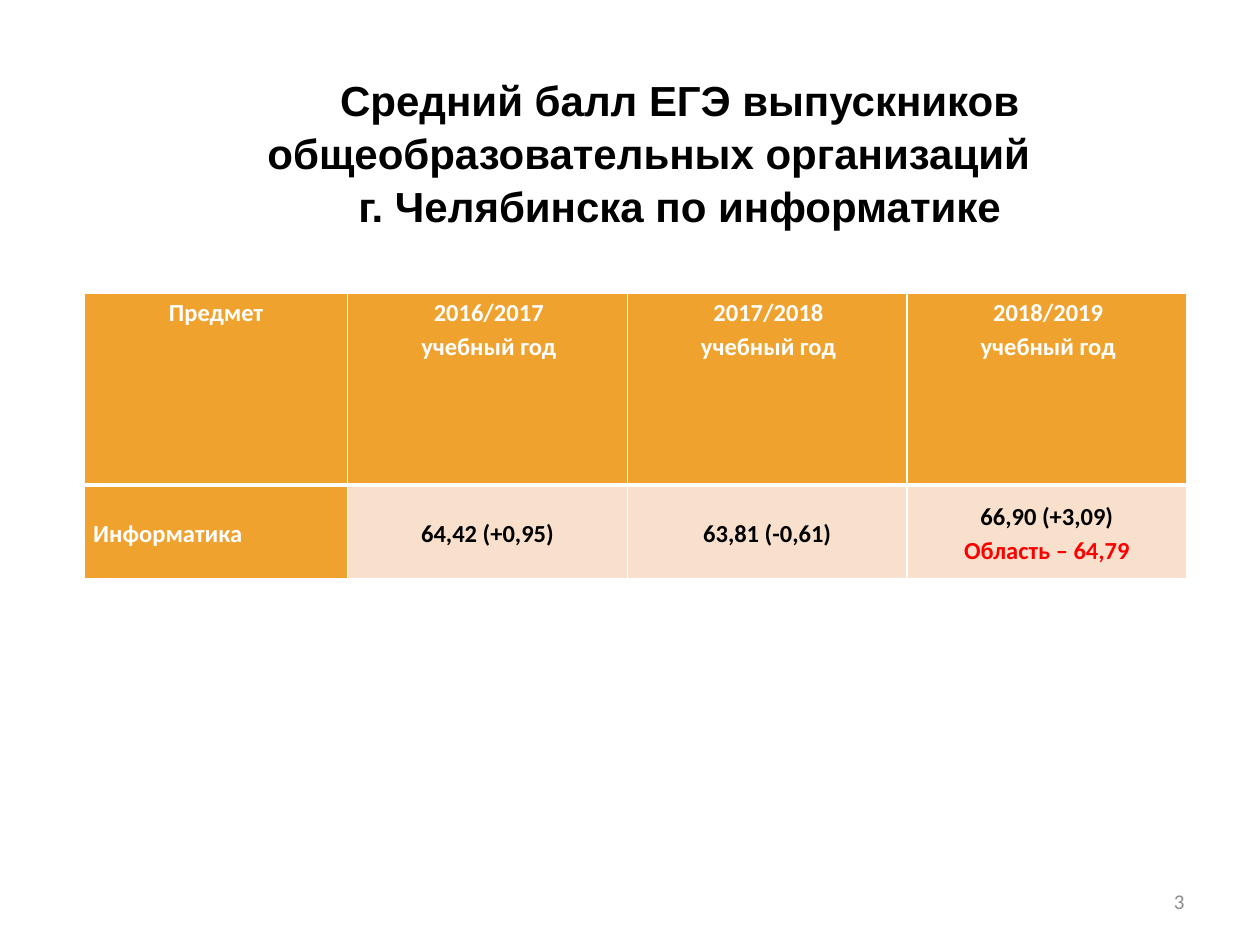
from lxml import etree
from pptx import Presentation
from pptx import util as u
from pptx.dml.color import RGBColor
from pptx.enum import text
from pptx.oxml.ns import qn

BLACK = RGBColor(0, 0, 0)
WHITE = RGBColor(0xFF, 0xFF, 0xFF)
RED = RGBColor(0xFF, 0, 0)
GREY = RGBColor(0x8C, 0x8C, 0x8C)
ORANGE = RGBColor(0xF0, 0xA2, 0x2E)
PEACH = RGBColor(0xF9, 0xE0, 0xCD)

COLUMNS, ROWS = 10, 7.5
CENTER, LEFT, RIGHT = text.PP_ALIGN.CENTER, text.PP_ALIGN.LEFT, text.PP_ALIGN.RIGHT
TOP, MIDDLE = text.MSO_ANCHOR.TOP, text.MSO_ANCHOR.MIDDLE


class SlideBuilder:
    """Places elements on a grid of COLUMNS by ROWS square units."""
    title_font, body_font = "Arial", "Calibri"

    def __init__(self, prs):
        self.unit = prs.slide_width / COLUMNS
        self.slide = prs.slides.add_slide(prs.slide_layouts[5])

    def grid(self, *lengths):
        return [u.Emu(round(n * self.unit)) for n in lengths]

    def set_text(self, tf, lines, size, color, font, bold=True, align=CENTER,
                 indent=0, spacing=1.0):
        tf.word_wrap = True
        tf.text = "\n".join(lines)
        for p in tf.paragraphs:
            p.alignment, p.line_spacing = align, spacing
            p._p.get_or_add_pPr().set("indent", str(self.grid(indent)[0]))
            for r in p.runs:
                r.font.name, r.font.size = font, u.Pt(size)
                r.font.bold, r.font.color.rgb = bold, color

    def title(self, box, lines):
        sp = self.slide.shapes.title
        sp.left, sp.top, sp.width, sp.height = self.grid(*box)
        tf = sp.text_frame
        tf.auto_size = text.MSO_AUTO_SIZE.NONE
        tf.vertical_anchor = TOP
        self.set_text(tf, lines, 24, BLACK, self.title_font, indent=0.49, spacing=1.05)

    def page_number(self, box, number):
        tf = self.slide.shapes.add_textbox(*self.grid(*box)).text_frame
        tf.vertical_anchor = MIDDLE
        self.set_text(tf, [number], 12, GREY, self.body_font, bold=False, align=RIGHT)

    def table(self, left, top, widths, heights, rows):
        box = self.grid(left, top, sum(widths), sum(heights))
        table = self.slide.shapes.add_table(len(rows), len(widths), *box).table
        for column, width in zip(table.columns, self.grid(*widths)):
            column.width = width
        for row, height in zip(table.rows, self.grid(*heights)):
            row.height = height
        for i, row in enumerate(rows):
            for j, lines in enumerate(row):
                self.cell(table.cell(i, j), lines, header=i == 0, label=j == 0)
        return table

    def cell(self, cell, lines, header, label):
        accent = header or label
        cell.margin_left, cell.margin_right = self.grid(0.07, 0.07)
        cell.margin_top = cell.margin_bottom = 0
        cell.vertical_anchor = TOP if header else MIDDLE
        self.set_text(cell.text_frame, lines, 14, WHITE if accent else BLACK,
                      self.body_font, align=LEFT if label and not header else CENTER,
                      indent=0.02 if header and not label else 0, spacing=1.15)
        self.borders(cell, top=1 if header else 3, bottom=3 if header else 1)
        cell.fill.solid()
        cell.fill.fore_color.rgb = ORANGE if accent else PEACH

    def borders(self, cell, top, bottom):
        tc_pr = cell._tc.get_or_add_tcPr()
        for side, points in zip("LRTB", (1, 1, top, bottom)):
            ln = etree.SubElement(tc_pr, qn(f"a:ln{side}"), w=str(u.Pt(points)))
            fill = etree.SubElement(ln, qn("a:solidFill"))
            etree.SubElement(fill, qn("a:srgbClr"), val=str(WHITE))


def main():
    prs = Presentation()
    prs.slide_width, prs.slide_height = u.Inches(COLUMNS), u.Inches(ROWS)
    s = SlideBuilder(prs)
    s.title((0.5, 0.52, 9.3, 1.62), [
        "Средний балл ЕГЭ выпускников общеобразовательных организаций",
        " г. Челябинска по информатике ",
    ])
    years = ["2016/2017", "2017/2018", "2018/2019"]
    scores = s.table(0.67, 2.33, [2.09] + [2.22] * 3, [1.52, 0.74], [
        [["Предмет"]] + [[year, "учебный год"] for year in years],
        [["Информатика"], ["64,42 (+0,95)"], ["63,81 (-0,61)"],
         ["66,90 (+3,09)", "Область – 64,79"]],
    ])
    region = scores.cell(1, 3).text_frame.paragraphs[1]
    region.runs[0].font.color.rgb = RED
    s.page_number((7.17, 6.95, 2.33, 0.4), "3")
    prs.save("out.pptx")


if __name__ == "__main__":
    main()
